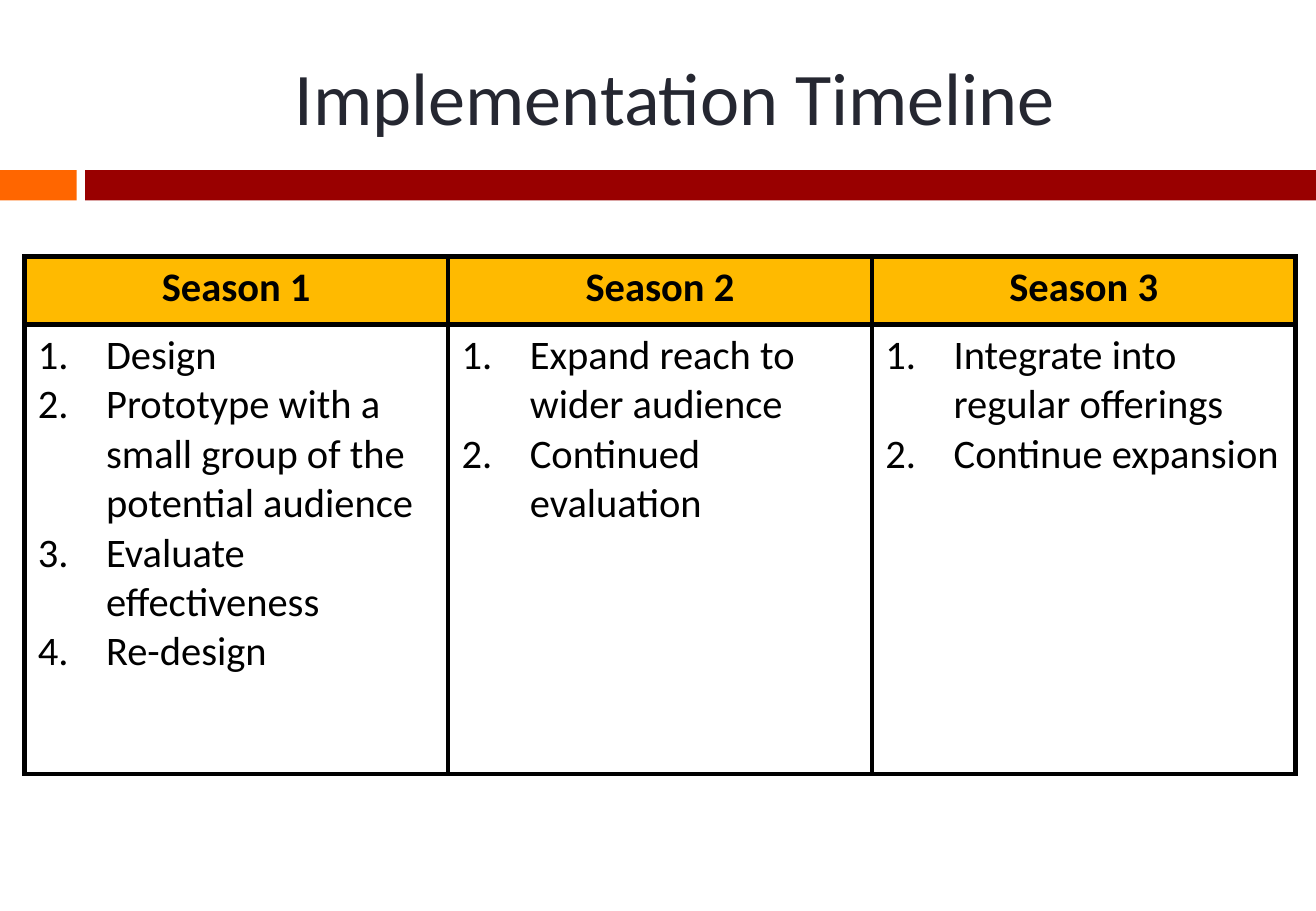
from pptx import Presentation
from pptx.dml.color import RGBColor
from pptx.enum.shapes import MSO_SHAPE as Shape
from pptx.enum.text import MSO_ANCHOR as Anchor, PP_ALIGN as Align
from pptx.oxml.xmlchemy import OxmlElement
from pptx.util import Pt


def color(hex_string):
    return RGBColor.from_string(hex_string)


def format_text(paragraph, size, hex_string, bold=False):
    for run in paragraph.runs:
        run.font.name = "Calibri"
        run.font.size = Pt(size)
        run.font.bold = bold
        run.font.color.rgb = color(hex_string)


seasons = {
    "Season 1": [
        "Design",
        "Prototype with a small group of the potential audience",
        "Evaluate effectiveness",
        "Re-design",
    ],
    "Season 2": ["Expand reach to wider audience", "Continued evaluation"],
    "Season 3": ["Integrate into regular offerings", "Continue expansion"],
}

presentation = Presentation()
presentation.slide_width = Pt(780)
presentation.slide_height = Pt(540)
slide = presentation.slides.add_slide(presentation.slide_layouts[5])

# Title
title = slide.shapes.title
title.left, title.top, title.width, title.height = Pt(52.5), Pt(18), Pt(695.5), Pt(78)
title.text_frame.text = "Implementation Timeline"
title.text_frame.vertical_anchor = Anchor.MIDDLE
title.text_frame.paragraphs[0].alignment = Align.CENTER
format_text(title.text_frame.paragraphs[0], 44, "252731")

# Two-part bar below the title
for left, width, fill in [(0, 45.5, "FF6600"), (50.5, 729.5, "990000")]:
    bar = slide.shapes.add_shape(Shape.RECTANGLE, Pt(left), Pt(100.8), Pt(width), Pt(18))
    bar.shadow.inherit = False
    bar.fill.solid()
    bar.fill.fore_color.rgb = color(fill)
    bar.line.fill.background()

# Timeline table
table = slide.shapes.add_table(
    2, len(seasons), Pt(14.4), Pt(152), Pt(753.6), Pt(306.8)).table
table.first_row = table.horz_banding = False
table.rows[0].height = Pt(40.4)
table.rows[1].height = Pt(266.4)
for column, (season, steps) in enumerate(seasons.items()):
    table.columns[column].width = Pt(251.2)
    header, body = table.cell(0, column), table.cell(1, column)
    header.text_frame.text = season
    body.text_frame.text = "\n".join(steps)

    # Header text
    header.text_frame.paragraphs[0].alignment = Align.CENTER
    format_text(header.text_frame.paragraphs[0], 24, "000000", bold=True)

    # Numbered steps with a hanging indent
    for paragraph in body.text_frame.paragraphs:
        format_text(paragraph, 24, "000000")
        properties = paragraph._p.get_or_add_pPr()
        properties.set("marL", str(Pt(40.5)))
        properties.set("indent", str(-Pt(40.5)))
        numbering = OxmlElement("a:buAutoNum")
        numbering.set("type", "arabicPeriod")
        properties.append(numbering)

    # Margins, borders and fill
    for cell, fill in [(header, "FFBA00"), (body, "FFFFFF")]:
        cell.margin_left = cell.margin_right = Pt(8)
        cell.margin_top = cell.margin_bottom = Pt(3.9)
        for side in ("a:lnL", "a:lnR", "a:lnT", "a:lnB"):
            border = OxmlElement(side)
            border.set("w", str(Pt(3)))
            border_fill = OxmlElement("a:solidFill")
            border_color = OxmlElement("a:srgbClr")
            border_color.set("val", "000000")
            border_fill.append(border_color)
            border.append(border_fill)
            cell._tc.get_or_add_tcPr().append(border)
        cell.fill.solid()
        cell.fill.fore_color.rgb = color(fill)

presentation.save("out.pptx")
